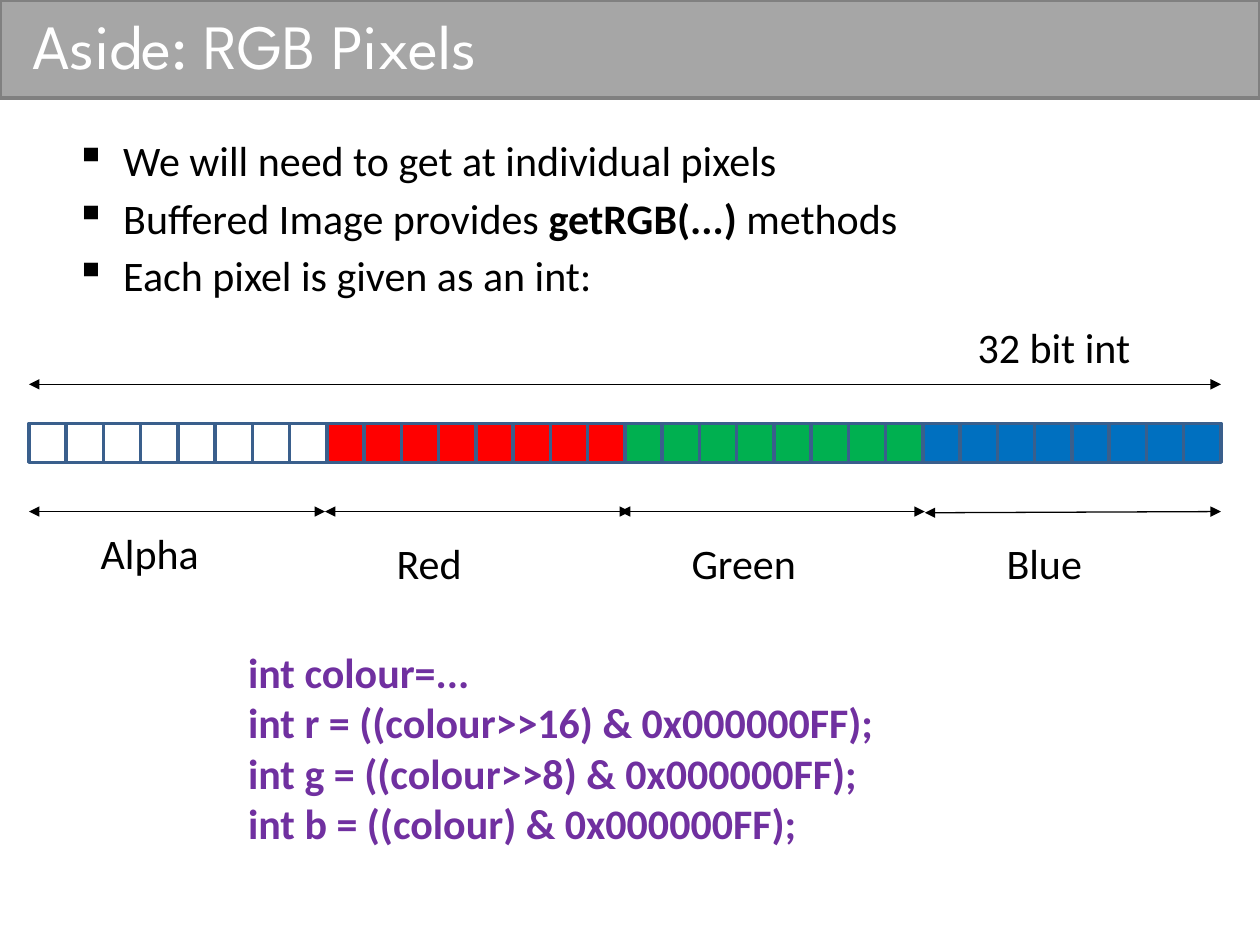
from pptx import Presentation
from pptx import util as u
from pptx.dml.color import RGBColor
from pptx.enum import shapes, text
from pptx.oxml.ns import qn
from lxml import etree

BLACK = RGBColor(0x00, 0x00, 0x00)
WHITE = RGBColor(0xFF, 0xFF, 0xFF)
BANNER = RGBColor(0xA6, 0xA6, 0xA6)
BANNER_EDGE = RGBColor(0x80, 0x80, 0x80)
BIT_EDGE = RGBColor(0x3A, 0x5F, 0x8C)
RED = RGBColor(0xFF, 0x00, 0x00)
GREEN = RGBColor(0x00, 0xB0, 0x50)
BLUE = RGBColor(0x00, 0x70, 0xC0)
PURPLE = RGBColor(0x70, 0x30, 0xA0)

prs = Presentation()
prs.slide_width, prs.slide_height = u.Inches(10), u.Inches(7.5)
s = prs.slides.add_slide(prs.slide_layouts[6])


def add_text(x, y, w, h, lines, size=24, color=BLACK, font="Calibri", bold=None, wrap=True):
    """Text box with one paragraph per line; a line is a list of (text, bold) or a string."""
    tf = s.shapes.add_textbox(u.Inches(x), u.Inches(y), u.Inches(w), u.Inches(h)).text_frame
    tf.word_wrap = wrap
    for i, line in enumerate(lines):
        p = tf.paragraphs[0] if i == 0 else tf.add_paragraph()
        p.font.size, p.font.name, p.font.color.rgb = u.Pt(size), font, color
        for content, strong in [(line, bold)] if isinstance(line, str) else line:
            r = p.add_run()
            r.text, r.font.bold = content, strong
    return tf


def add_arrow(x1, y1, x2, y2):
    """Thin black line with a triangle at both ends."""
    c = s.shapes.add_connector(shapes.MSO_CONNECTOR.STRAIGHT, u.Inches(x1), u.Inches(y1),
                               u.Inches(x2), u.Inches(y2))
    c.line.color.rgb, c.line.width = BLACK, u.Pt(0.75)
    ln = c.line._get_or_add_ln()
    for end in ("a:headEnd", "a:tailEnd"):
        etree.SubElement(ln, qn(end), type="triangle")
    etree.SubElement(c._element.spPr, qn("a:effectLst"))


# Title banner
sp = s.shapes.add_shape(shapes.MSO_SHAPE.RECTANGLE, 0, 0, prs.slide_width, u.Inches(0.78))
sp.shadow.inherit = False
sp.fill.solid()
sp.fill.fore_color.rgb = BANNER
sp.line.color.rgb, sp.line.width = BANNER_EDGE, u.Pt(2)
tf = add_text(0.16, 0, 9.53, 0.7, ["Aside: RGB Pixels"], 36, WHITE, "League Spartan")
tf.vertical_anchor = text.MSO_ANCHOR.MIDDLE

# Bullets
tf = add_text(0.5, 1.02, 9, 1.5, [
    "We will need to get at individual pixels",
    [("Buffered Image provides ", None), ("getRGB(...)", True), (" methods", None)],
    "Each pixel is given as an int:",
])
for p in tf.paragraphs:
    p.space_before = u.Pt(4)
    pPr = p._p.get_or_add_pPr()
    pPr.set("marL", str(u.Inches(0.38)))
    pPr.set("indent", str(-u.Inches(0.38)))
    bullet = etree.Element(qn("a:buChar"), char="▪")
    pPr.find(qn("a:defRPr")).addprevious(bullet)

# The 32 bits, eight per channel
LEFT, RIGHT, BITS = 0.23, 9.69, 32
bit = (RIGHT - LEFT) / BITS
for i in range(BITS):
    sp = s.shapes.add_shape(shapes.MSO_SHAPE.RECTANGLE, u.Inches(LEFT + i * bit), u.Inches(3.36),
                            u.Inches(bit), u.Inches(0.31))
    sp.shadow.inherit = False
    fill = (None, RED, GREEN, BLUE)[i // 8]
    if fill is None:
        sp.fill.background()
    else:
        sp.fill.solid()
        sp.fill.fore_color.rgb = fill
    sp.line.color.rgb, sp.line.width = BIT_EDGE, u.Pt(2)

# Width of the whole int
add_arrow(LEFT, 3.05, RIGHT, 3.05)
add_text(7.66, 2.5, 1.42, 0.5, ["32 bit int"], wrap=False)

# Channel spans: arrow start, end, start height, then label and its box
for x1, x2, y1, label, x, y, w in [
    (LEFT, 2.58, 4.06, "Alpha", 0.7, 4.14, 0.99),
    (2.58, 5, 4.06, "Red", 3.05, 4.22, 0.72),
    (4.92, 7.34, 4.06, "Green", 5.39, 4.22, 1.04),
    (7.34, RIGHT, 4.07, "Blue", 7.89, 4.22, 0.81),
]:
    add_arrow(x1, y1, x2, 4.06)
    add_text(x, y, w, 0.5, [label], wrap=False)

# Code extracting the channels
add_text(1.87, 5.08, 6.95, 1.72, [
    "int colour=...",
    "int r = ((colour>>16) & 0x000000FF);",
    "int g = ((colour>>8) & 0x000000FF);",
    "int b = ((colour) & 0x000000FF);",
], color=PURPLE, bold=True)

prs.save("out.pptx")
